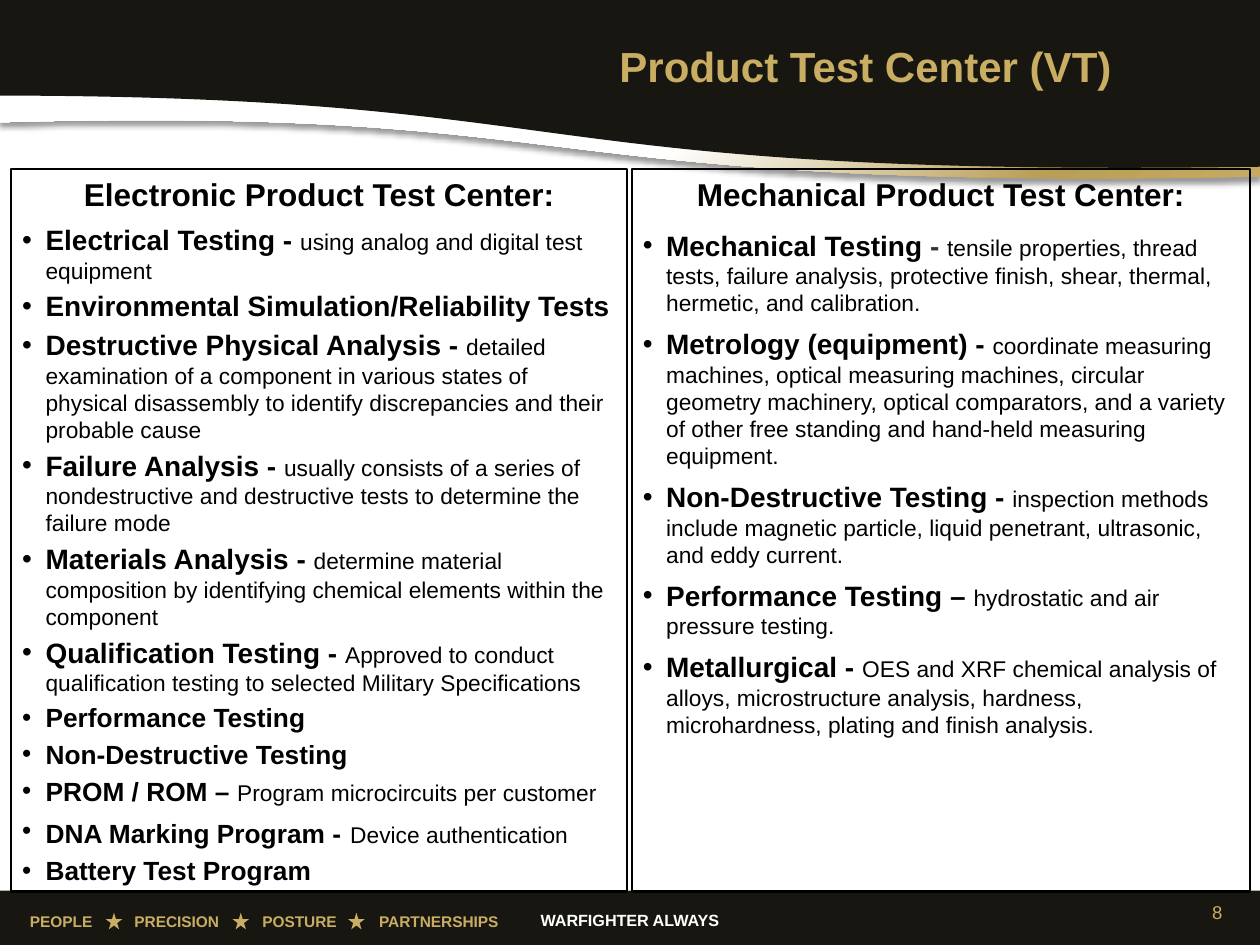
from lxml import etree
from pptx import Presentation
from pptx import oxml
from pptx.dml.color import RGBColor
from pptx.enum import shapes, text
from pptx.util import Inches, Pt

THEME = {
    "colors": {"black": "000000", "dark": "171610", "gold": "C9AD62",
               "gray": "333333", "white": "FFFFFF"},
    "styles": {  # size, bold, color
        "title": (27.2, True, "gold"),
        "heading": (20.4, True, "black"),
        "topic": (18.1, True, "black"),
        "dash": (18.1, True, "gray"),
        "short topic": (17, True, "black"),
        "wide space": (20.4, True, "black"),
        "detail": (14.7, False, "black"),
        "motto": (10.5, True, "white"),
        "values": (10, True, "gold"),
        "number": (12, False, "gold"),
    },
}
NAMESPACE = 'xmlns:a="http://schemas.openxmlformats.org/drawingml/2006/main"'
COLORS = {name: RGBColor.from_string(code) for name, code in THEME["colors"].items()}


def add_text(paragraph, words, style):
    size, bold, color = THEME["styles"][style]
    run = paragraph.add_run()
    run.text = words
    for name, value in {"name": "Arial", "size": Pt(size), "bold": bold}.items():
        setattr(run.font, name, value)
    run.font.color.rgb = COLORS[color]


def add_wave(top, start, controls, end):
    """Draw a flat top edge over a Bezier curve; points are in hundredths of an inch."""
    builder = slide.shapes.build_freeform(end[0], top, scale=Inches(0.01))
    builder.add_line_segments([(start[0], top), start, end], close=True)
    wave = builder.convert_to_shape()
    points = "".join(f'<a:pt x="{x - start[0]}" y="{y - top}"/>' for x, y in (*controls, end))
    bottom_edge = wave._element.findall(".//" + oxml.ns.qn("a:lnTo"))[2]
    bottom_edge.getparent().replace(bottom_edge, etree.fromstring(
        f"<a:cubicBezTo {NAMESPACE}>{points}</a:cubicBezTo>"))
    wave.shadow.inherit = False
    wave.line.fill.background()
    return wave


presentation = Presentation()
presentation.slide_width, presentation.slide_height = Inches(11.33), Inches(8.5)
slide = presentation.slides.add_slide(presentation.slide_layouts[3])

# Header waves
gold_wave = add_wave(59, (0, 110), ((549, 95), (454, 172)), (1133, 159))
gold_wave.fill.gradient()
properties = gold_wave._element.spPr
gradient = properties.find(oxml.ns.qn("a:gradFill"))
stops = "".join(f'<a:gs pos="{place}000"><a:srgbClr val="{color}"/></a:gs>'
                for place, color in ((55, "FFFFFF"), (84, "B99E55"), (100, "C7AA61")))
properties.replace(gradient, etree.fromstring(
    f'<a:gradFill {NAMESPACE} rotWithShape="1"><a:gsLst>{stops}</a:gsLst>'
    '<a:path path="circle"><a:fillToRect r="100000" b="100000"/></a:path></a:gradFill>'))
properties.find(oxml.ns.qn("a:effectLst")).append(etree.fromstring(
    f'<a:outerShdw {NAMESPACE} blurRad="{Pt(4)}" dist="{Pt(3)}" dir="5400000" '
    'rotWithShape="0"><a:srgbClr val="000000"><a:alpha val="40000"/></a:srgbClr>'
    '</a:outerShdw>'))

dark_wave = add_wave(0, (0, 86), ((546, 87), (452, 160)), (1133, 150))
dark_wave.fill.solid()
dark_wave.fill.fore_color.rgb = COLORS["dark"]

# Footer bar, stars and texts
RECTANGLE, STAR = shapes.MSO_SHAPE.RECTANGLE, shapes.MSO_SHAPE.STAR_5_POINT
footer_shapes = [(RECTANGLE, 0, 8.01, 11.33, 0.49, "dark")]
footer_shapes += [(STAR, left, 8.21, 0.15, 0.15, "gold") for left in (0.95, 2.09, 3.13)]
for kind, left, top, width, height, color in footer_shapes:
    shape = slide.shapes.add_shape(kind, Inches(left), Inches(top), Inches(width), Inches(height))
    shape.shadow.inherit = False
    shape.fill.solid()
    shape.fill.fore_color.rgb = COLORS[color]
    shape.line.fill.background()

ALIGN, ANCHOR = text.PP_ALIGN, text.MSO_ANCHOR
footer_texts = [
    ("WARFIGHTER ALWAYS", "motto", 4.47, 8.14, 2.39, 0.28, ALIGN.CENTER, ANCHOR.TOP),
    ("PEOPLE\tPRECISION\tPOSTURE\tPARTNERSHIPS", "values",
     0.17, 8.15, 4.61, 0.28, ALIGN.LEFT, ANCHOR.TOP),
    ("8", "number", 7.73, 7.98, 3.36, 0.45, ALIGN.RIGHT, ANCHOR.MIDDLE),
]
for words, style, left, top, width, height, alignment, anchor in footer_texts:
    box = slide.shapes.add_textbox(Inches(left), Inches(top), Inches(width), Inches(height))
    box.text_frame.word_wrap = True
    box.text_frame.vertical_anchor = anchor
    paragraph = box.text_frame.paragraphs[0]
    paragraph.alignment = alignment
    if "\t" in words:
        tabs = "".join(f'<a:tab pos="{Inches(place)}" algn="l"/>' for place in (0.94, 2.09, 3.14))
        paragraph._p.get_or_add_pPr().append(
            etree.fromstring(f"<a:tabLst {NAMESPACE}>{tabs}</a:tabLst>"))
    add_text(paragraph, words, style)

# Title and the two columns
title, electronic, mechanical = slide.placeholders
frames = [
    (title, 4.63, 0.3, 6.31, 0.94, 0.11, 0.06),
    (electronic, 0.1, 1.52, 5.54, 6.5, 0.1, 0.05),
    (mechanical, 5.68, 1.52, 5.56, 6.5, 0.1, 0.05),
]
for holder, left, top, width, height, side, edge in frames:
    slide.shapes._spTree.append(holder._element)
    for name, value in {"left": left, "top": top, "width": width, "height": height}.items():
        setattr(holder, name, Inches(value))
    settings = {"margin_left": Inches(side), "margin_right": Inches(side),
                "margin_top": Inches(edge), "margin_bottom": Inches(edge),
                "word_wrap": True, "auto_size": text.MSO_AUTO_SIZE.NONE,
                "vertical_anchor": ANCHOR.TOP}
    for name, value in settings.items():
        setattr(holder.text_frame, name, value)

title_line = title.text_frame.paragraphs[0]
title_line.alignment = ALIGN.CENTER
add_text(title_line, "Product Test Center (VT)", "title")

electronic_items = [
    [("Electrical Testing - ", "topic"), ("using analog and digital test equipment", "detail")],
    [("Environmental Simulation/Reliability Tests", "topic")],
    [("Destructive Physical Analysis - ", "topic"),
     ("detailed examination of a component in various states of physical disassembly "
      "to identify discrepancies and their probable cause", "detail")],
    [("Failure Analysis - ", "topic"),
     ("usually consists of a series of nondestructive and destructive tests "
      "to determine the failure mode", "detail")],
    [("Materials Analysis - ", "topic"),
     ("determine material composition by identifying chemical elements "
      "within the component", "detail")],
    [("Qualification Testing - ", "topic"),
     ("Approved to conduct qualification testing to selected Military Specifications", "detail")],
    [("Performance Testing", "short topic")],
    [("Non-Destructive Testing", "short topic")],
    [("PROM / ROM – ", "short topic"), ("Program microcircuits per customer", "detail")],
    [("DNA Marking Program -", "short topic"), (" ", "wide space"),
     ("Device authentication", "detail")],
    [("Battery Test Program", "short topic")],
]
mechanical_items = [
    [("Mechanical Testing ", "topic"), ("- ", "dash"),
     ("tensile properties, thread tests, failure analysis, protective finish, shear, "
      "thermal, hermetic, and calibration.", "detail")],
    [("Metrology (equipment) - ", "topic"),
     ("coordinate measuring machines, optical measuring machines, circular geometry "
      "machinery, optical comparators, and a variety of other free standing and "
      "hand-held measuring equipment.", "detail")],
    [("Non-Destructive Testing - ", "topic"),
     ("inspection methods include magnetic particle, liquid penetrant, ultrasonic, "
      "and eddy current.", "detail")],
    [("Performance Testing – ", "topic"), ("hydrostatic and air pressure testing.", "detail")],
    [("Metallurgical - ", "topic"),
     ("OES and XRF chemical analysis of alloys, microstructure analysis, hardness, "
      "microhardness, plating and finish analysis.", "detail")],
]
columns = [
    (electronic, "Electronic Product Test Center:", 0, electronic_items),
    (mechanical, "Mechanical Product Test Center:", 3.4, mechanical_items),
]
for holder, heading, space_before, items in columns:
    holder.line.color.rgb = COLORS["black"]
    holder.line.width = Pt(1.5)
    for number, runs in enumerate([[(heading, "heading")], *items]):
        frame = holder.text_frame
        paragraph = frame.add_paragraph() if number else frame.paragraphs[0]
        layout = paragraph._p.get_or_add_pPr()
        layout.set("marL", str(Inches(0.21) if number else 0))
        layout.set("indent", str(Inches(-0.21) if number else 0))
        bullet = '<a:buChar {} char="•"/>' if number else "<a:buNone {}/>"
        layout.append(etree.fromstring(bullet.format(NAMESPACE)))
        paragraph.alignment = ALIGN.LEFT if number else ALIGN.CENTER
        paragraph.space_before = Pt(space_before if number else 0)
        paragraph.space_after = Pt(3.4 if number else 6.8)
        for words, style in runs:
            add_text(paragraph, words, style)

presentation.save("out.pptx")
